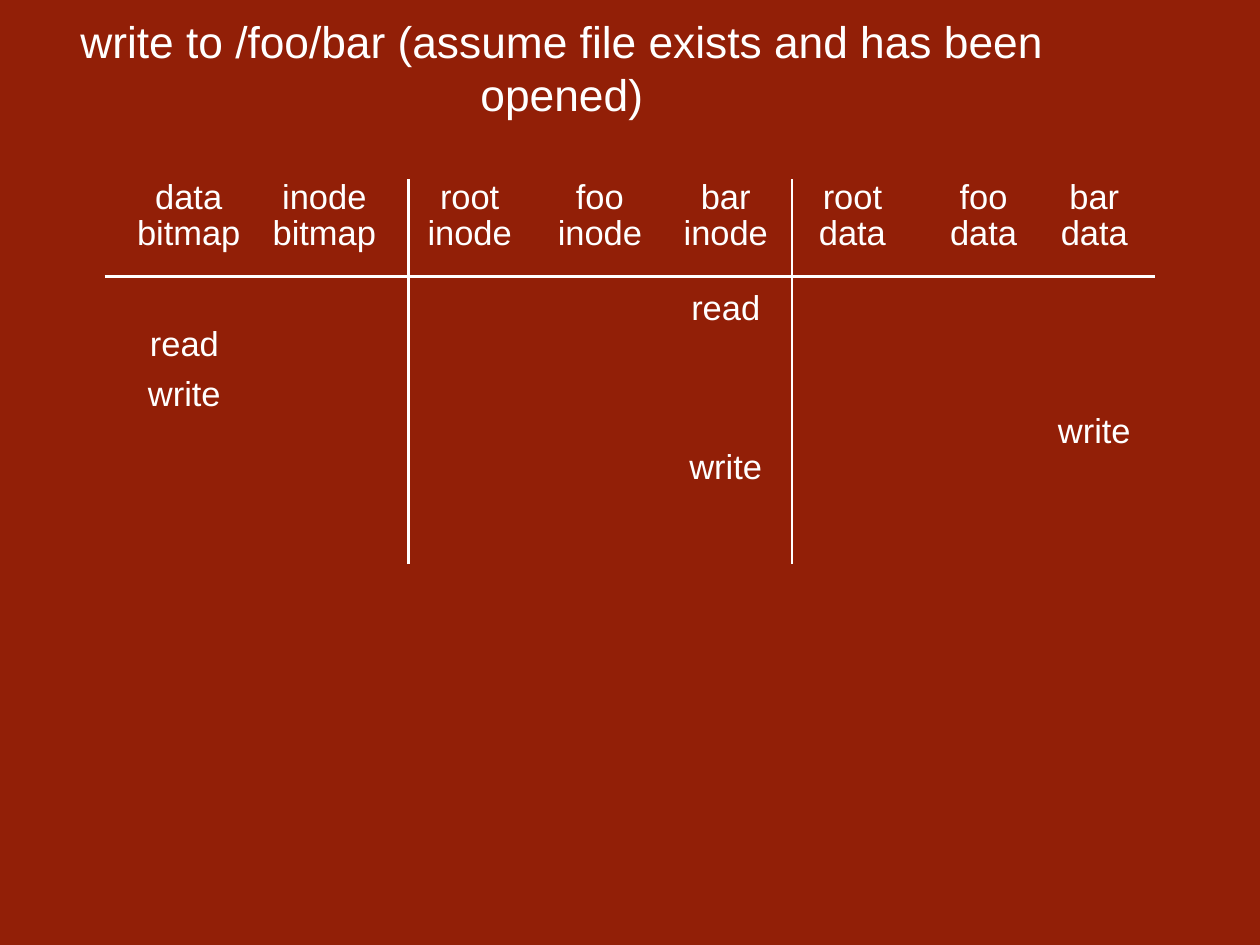
from pptx import Presentation
from pptx import util as u
from pptx.dml.color import RGBColor
from pptx.enum import shapes, text
from pptx.oxml.ns import qn
from lxml import etree

COLORS = {"background": "921F07", "foreground": "FFFFFF"}
FONT = "Arial"
WORD_WIDTHS = {
    "data": 0.9, "inode": 1.1, "root": 0.79, "foo": 0.67, "bar": 0.71,
    "bitmap": 1.33, "read": 0.92, "write": 0.95,
}
COLUMNS = [
    (0.95, "data", "bitmap"), (2.48, "inode", "bitmap"),
    (4.12, "root", "inode"), (5.59, "foo", "inode"), (7.01, "bar", "inode"),
    (8.44, "root", "data"), (9.92, "foo", "data"), (11.17, "bar", "data"),
]
OPERATIONS = [
    (7.01, 1.15, "read"), (0.9, 1.56, "read"), (0.9, 2.12, "write"),
    (11.17, 2.54, "write"), (7.01, 2.95, "write"),
]
ROW_HEIGHT = 0.58
HEADER_STEP = 0.41
RULE_TOP = 1.1
DIVIDERS = [3.43, 7.76]


def add_label(slide, left, top, width, height, words, size, wrap=False):
    label = slide.shapes.add_textbox(*map(u.Inches, (left, top, width, height)))
    frame = label.text_frame
    frame.word_wrap = wrap
    frame.vertical_anchor = text.MSO_ANCHOR.MIDDLE
    frame.margin_left = frame.margin_right = u.Inches(0.06)
    frame.margin_top = frame.margin_bottom = u.Inches(0.06)
    frame.text = words
    paragraph = frame.paragraphs[0]
    paragraph.alignment = text.PP_ALIGN.CENTER
    font = paragraph.runs[0].font
    font.name = FONT
    font.size = u.Pt(size)
    font.color.rgb = RGBColor.from_string(COLORS["foreground"])


def add_word(slide, center, top, word):
    width = WORD_WIDTHS[word]
    add_label(slide, center - width / 2, top, width, ROW_HEIGHT, word, 28)


def add_rule(slide, *ends):
    rule = slide.shapes.add_connector(
        shapes.MSO_CONNECTOR.STRAIGHT, *map(u.Inches, ends))
    rule.line.color.rgb = RGBColor.from_string(COLORS["foreground"])
    rule.line.width = u.Pt(2)
    etree.SubElement(rule._element.spPr, qn("a:effectLst"))


def add_title(slide, left, top, width, height):
    add_label(slide, left, top, width, height,
              "write to /foo/bar (assume file exists and has been opened)",
              36, wrap=True)


def add_timeline(slide, left, top, width, height):
    for center, *header in COLUMNS:
        for row, word in enumerate(header):
            add_word(slide, left + center, top - 0.1 + row * HEADER_STEP, word)
    add_rule(slide, left, top + RULE_TOP, left + width, top + RULE_TOP)
    for divider in DIVIDERS:
        add_rule(slide, left + divider, top + height, left + divider, top)
    for center, offset, word in OPERATIONS:
        add_word(slide, left + center, top + offset, word)


def main():
    presentation = Presentation()
    presentation.slide_width = u.Inches(14.22)
    presentation.slide_height = u.Inches(10.67)
    slide = presentation.slides.add_slide(presentation.slide_layouts[6])
    fill = slide.background.fill
    fill.solid()
    fill.fore_color.rgb = RGBColor.from_string(COLORS["background"])
    add_title(slide, 0.74, 0.1, 11.2, 1.32)
    add_timeline(slide, 1.18, 2.02, 11.85, 4.35)
    presentation.save("out.pptx")


if __name__ == "__main__":
    main()
